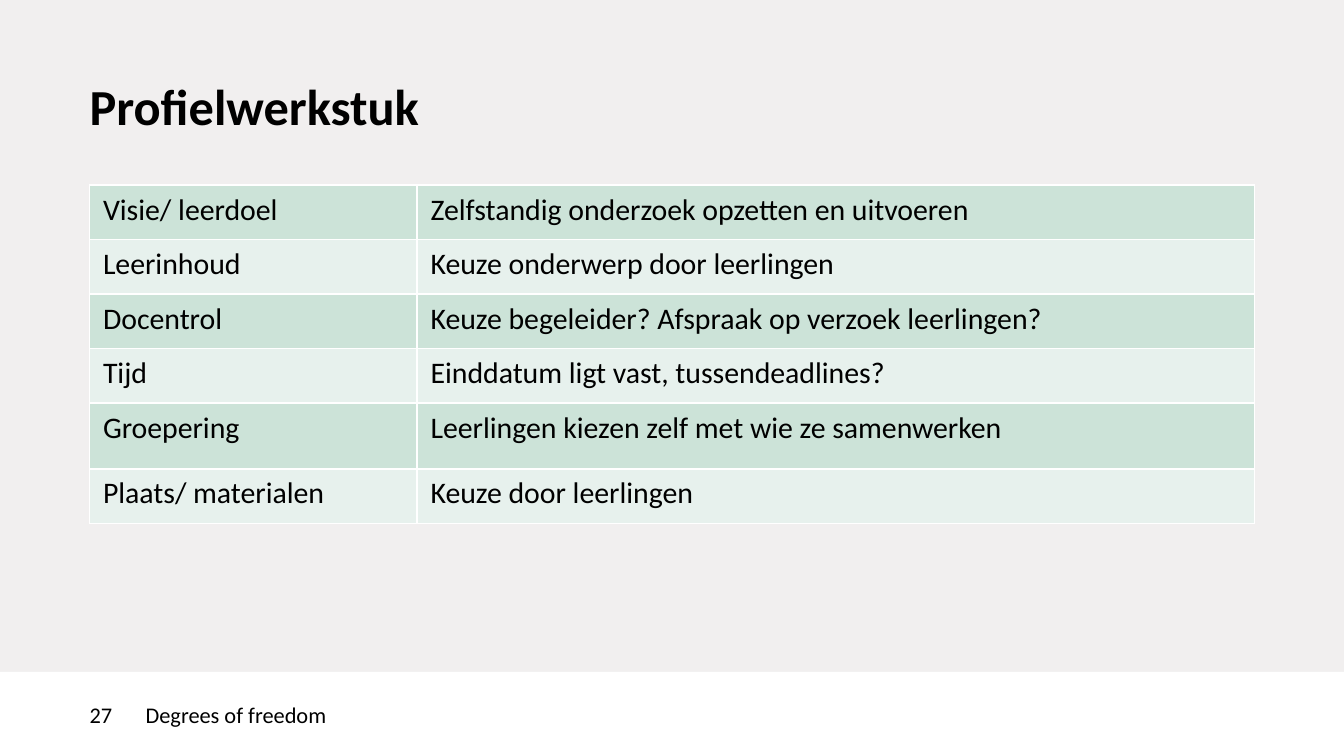
from dataclasses import dataclass

from lxml.etree import SubElement
from pptx import Presentation
from pptx.dml.color import RGBColor
from pptx.enum.shapes import MSO_SHAPE
from pptx.enum.text import MSO_ANCHOR, MSO_AUTO_SIZE, PP_ALIGN
from pptx.oxml.ns import qn
from pptx.slide import Slide
from pptx.table import _Cell
from pptx.text.text import TextFrame
from pptx.util import Emu, Pt

PX = 9525
FONT = "Calibri"
BLACK = RGBColor(0x00, 0x00, 0x00)
WHITE = RGBColor(0xFF, 0xFF, 0xFF)
GREY = RGBColor(0xF1, 0xEF, 0xEF)
GREEN = RGBColor(0xCC, 0xE3, 0xD8)
MINT = RGBColor(0xE7, 0xF1, 0xED)

WIDTH, HEIGHT = 960, 540
LEFT, SPAN = 64, 832
COLS = (234, 598)


@dataclass
class Row:
    label: str
    text: str
    height: int = 39


@dataclass
class Note:
    text: str
    left: int
    width: int


ROWS = [
    Row("Visie/ leerdoel", "Zelfstandig onderzoek opzetten en uitvoeren"),
    Row("Leerinhoud", "Keuze onderwerp door leerlingen"),
    Row("Docentrol", "Keuze begeleider? Afspraak op verzoek leerlingen?"),
    Row("Tijd", "Einddatum ligt vast, tussendeadlines?"),
    Row("Groepering", "Leerlingen kiezen zelf met wie ze samenwerken", 47),
    Row("Plaats/ materialen", "Keuze door leerlingen"),
]
NOTES = [Note("27", LEFT, 40), Note("Degrees of freedom", 104, 665)]


def px(*sizes: int) -> list[Emu]:
    return [Emu(size * PX) for size in sizes]


def write(frame: TextFrame, text: str, size: int, bold: bool = False) -> None:
    frame.text = text
    frame.word_wrap = True
    para = frame.paragraphs[0]
    para.alignment = PP_ALIGN.LEFT
    font = para.runs[0].font
    font.name, font.size, font.bold = FONT, Pt(size), bold
    font.color.rgb = BLACK


def trim(frame: TextFrame) -> None:
    frame.margin_left = frame.margin_right = 0
    frame.margin_top = frame.margin_bottom = 0


def edge(cell: _Cell, color: RGBColor) -> None:
    props = cell._tc.get_or_add_tcPr()
    for at, side in enumerate(("lnL", "lnR", "lnT", "lnB")):
        line = SubElement(props, qn(f"a:{side}"), w=str(Pt(1)))
        fill = SubElement(line, qn("a:solidFill"))
        SubElement(fill, qn("a:srgbClr"), val=str(color))
        props.insert(at, line)  # borders come before the fill


def add_title(slide: Slide, text: str) -> None:
    title = slide.shapes.title
    title.left, title.top, title.width, title.height = px(LEFT, 58, SPAN, 41)
    frame = title.text_frame
    write(frame, text, 27, bold=True)
    trim(frame)
    frame.auto_size = MSO_AUTO_SIZE.NONE
    frame.vertical_anchor = MSO_ANCHOR.MIDDLE
    frame.paragraphs[0].line_spacing = Pt(27)


def add_grid(slide: Slide, rows: list[Row]) -> None:
    total = sum(row.height for row in rows)
    table = slide.shapes.add_table(
        len(rows), len(COLS), *px(LEFT, 132, SPAN, total)).table
    table.first_row = False
    for col, width in zip(table.columns, px(*COLS)):
        col.width = width
    for i, row in enumerate(rows):
        table.rows[i].height = Emu(row.height * PX)
        for j, text in enumerate((row.label, row.text)):
            cell = table.cell(i, j)
            write(cell.text_frame, text, 16)
            cell.fill.solid()
            cell.fill.fore_color.rgb = MINT if i % 2 else GREEN
            edge(cell, WHITE)


def add_band(slide: Slide) -> None:
    band = slide.shapes.add_shape(
        MSO_SHAPE.RECTANGLE, *px(0, 480, WIDTH, HEIGHT - 480))
    band.shadow.inherit = False
    band.fill.solid()
    band.fill.fore_color.rgb = WHITE
    band.line.fill.background()


def add_note(slide: Slide, note: Note) -> None:
    box = slide.shapes.add_textbox(*px(note.left, 501, note.width, 36))
    write(box.text_frame, note.text, 12)
    trim(box.text_frame)


def main() -> None:
    deck = Presentation()
    deck.slide_width, deck.slide_height = px(WIDTH, HEIGHT)
    slide = deck.slides.add_slide(deck.slide_layouts[5])
    slide.background.fill.solid()
    slide.background.fill.fore_color.rgb = GREY

    # Title and table
    add_title(slide, "Profielwerkstuk")
    add_grid(slide, ROWS)

    # Footer
    add_band(slide)
    for note in NOTES:
        add_note(slide, note)

    deck.save("out.pptx")


if __name__ == "__main__":
    main()
